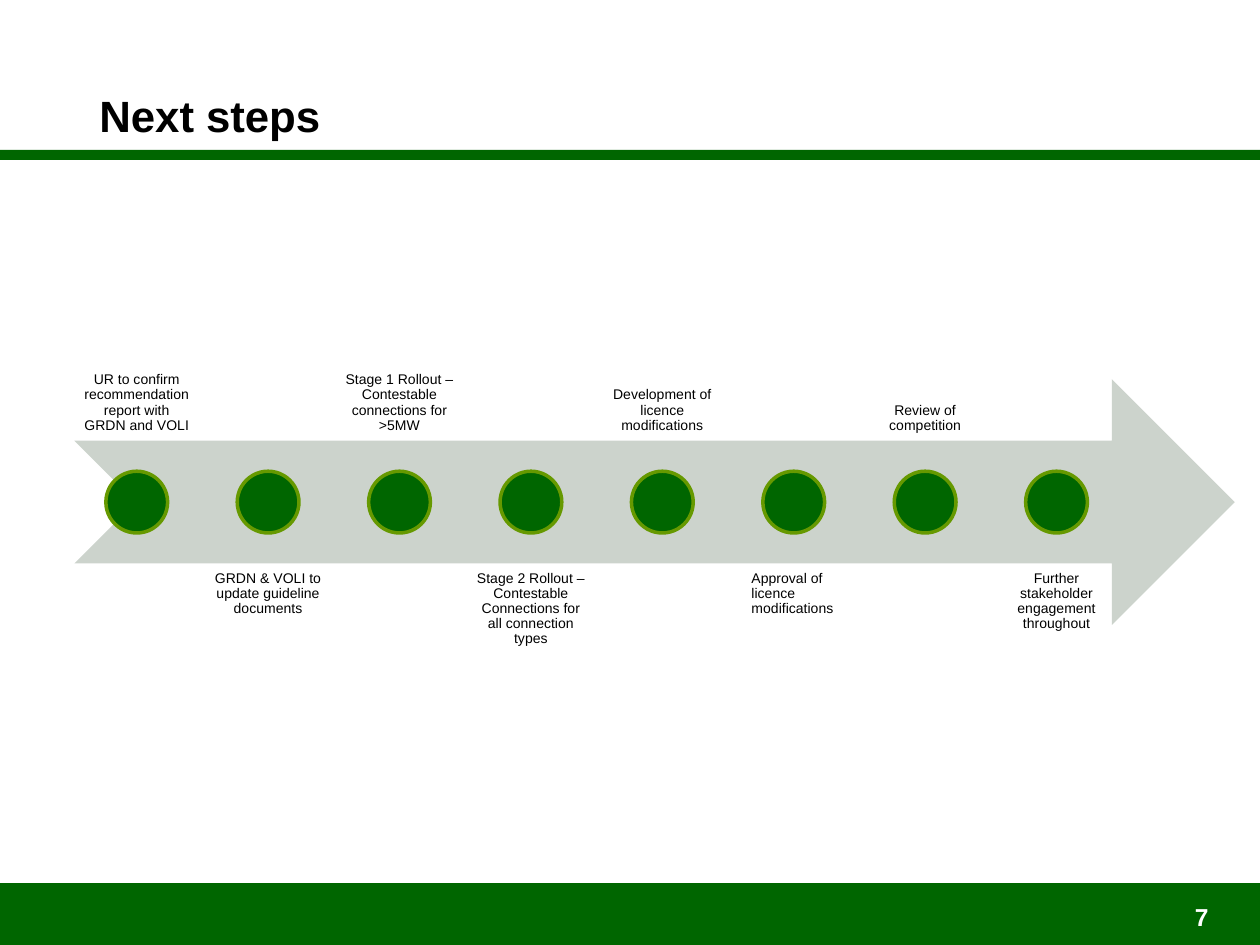
from pptx import Presentation
from pptx import util as u
from pptx.dml.color import RGBColor
from pptx.enum import shapes, text

CENTER, LEFT, RIGHT = text.PP_ALIGN.CENTER, text.PP_ALIGN.LEFT, text.PP_ALIGN.RIGHT

STEPS = [
    ("UR to confirm recommendation report with GRDN and VOLI", CENTER),
    ("GRDN & VOLI to update guideline documents", CENTER),
    ("Stage 1 Rollout – Contestable connections for >5MW", CENTER),
    ("Stage 2 Rollout – Contestable Connections for all connection types", CENTER),
    ("Development of licence modifications", CENTER),
    ("Approval of licence modifications", LEFT),
    ("Review of competition", CENTER),
    ("Further stakeholder engagement throughout", CENTER),
]

GREEN = RGBColor(0x00, 0x66, 0x00)
LIGHT_GREEN = RGBColor(0x66, 0x99, 0x00)
GREY = RGBColor(0xCC, 0xD3, 0xCC)
BLACK = RGBColor(0x00, 0x00, 0x00)
WHITE = RGBColor(0xFF, 0xFF, 0xFF)

WIDTH, HEIGHT = 10, 7.5
ARROW_LEFT, ARROW_TOP, ARROW_WIDTH, ARROW_HEIGHT = 0.59, 3.01, 9.21, 1.95
LABEL_WIDTH, LABEL_INSET, LEFT_LABEL_SHIFT, DOT = 0.99, 0.06, 0.1, 0.49
FIRST_LABEL, LAST_LABEL = 0.59, 7.89
PITCH = (LAST_LABEL - FIRST_LABEL) / (len(STEPS) - 1)
MIDDLE = ARROW_TOP + ARROW_HEIGHT / 2

presentation = Presentation()
presentation.slide_width, presentation.slide_height = u.Inches(WIDTH), u.Inches(HEIGHT)
slide = presentation.slides.add_slide(presentation.slide_layouts[6])


def add_shape(kind, left, top, width, height, fill, line=None):
    shape = slide.shapes.add_shape(kind, *map(u.Inches, (left, top, width, height)))
    shape.shadow.inherit = False
    shape.fill.solid()
    shape.fill.fore_color.rgb = fill
    if line is None:
        shape.line.fill.background()
    else:
        shape.line.color.rgb = line
        shape.line.width = u.Pt(2)


def add_text(content, left, top, width, height, size, color, bold=False,
             align=LEFT, anchor=text.MSO_ANCHOR.TOP, spacing=None):
    frame = slide.shapes.add_textbox(*map(u.Inches, (left, top, width, height))).text_frame
    frame.word_wrap = True
    frame.vertical_anchor = anchor
    paragraph = frame.paragraphs[0]
    paragraph.text = content
    paragraph.alignment = align
    paragraph.line_spacing = spacing
    paragraph.font.name = "Arial"
    paragraph.font.size = u.Pt(size)
    paragraph.font.bold = bold
    paragraph.font.color.rgb = color
    return frame


add_shape(shapes.MSO_SHAPE.RECTANGLE, 0, 7.01, WIDTH, 0.49, GREEN)
add_shape(shapes.MSO_SHAPE.RECTANGLE, 0, 1.19, WIDTH, 0.08, GREEN)
add_text("Next steps", 0.69, 0.6, 7.11, 0.62, 25, BLACK, bold=True,
         anchor=text.MSO_ANCHOR.MIDDLE)
add_text("7", 7.36, 7.11, 2.33, 0.52, 14, WHITE, bold=True, align=RIGHT)

add_shape(shapes.MSO_SHAPE.NOTCHED_RIGHT_ARROW, ARROW_LEFT, ARROW_TOP,
          ARROW_WIDTH, ARROW_HEIGHT, GREY)
for index, (label, align) in enumerate(STEPS):
    left = FIRST_LABEL + index * PITCH
    above = index % 2 == 0
    top = MIDDLE - ARROW_HEIGHT * 5 / 4 if above else MIDDLE + ARROW_HEIGHT / 4
    frame = add_text(label, left, top, LABEL_WIDTH, ARROW_HEIGHT, 8, BLACK,
                     align=align, spacing=0.9,
                     anchor=text.MSO_ANCHOR.BOTTOM if above else text.MSO_ANCHOR.TOP)
    shift = LEFT_LABEL_SHIFT if align == LEFT else 0
    frame.margin_left = u.Inches(LABEL_INSET + shift)
    frame.margin_right = frame.margin_top = frame.margin_bottom = u.Inches(LABEL_INSET)
    add_shape(shapes.MSO_SHAPE.OVAL, left + (LABEL_WIDTH - DOT) / 2, MIDDLE - DOT / 2,
              DOT, DOT, GREEN, LIGHT_GREEN)

presentation.save("out.pptx")
